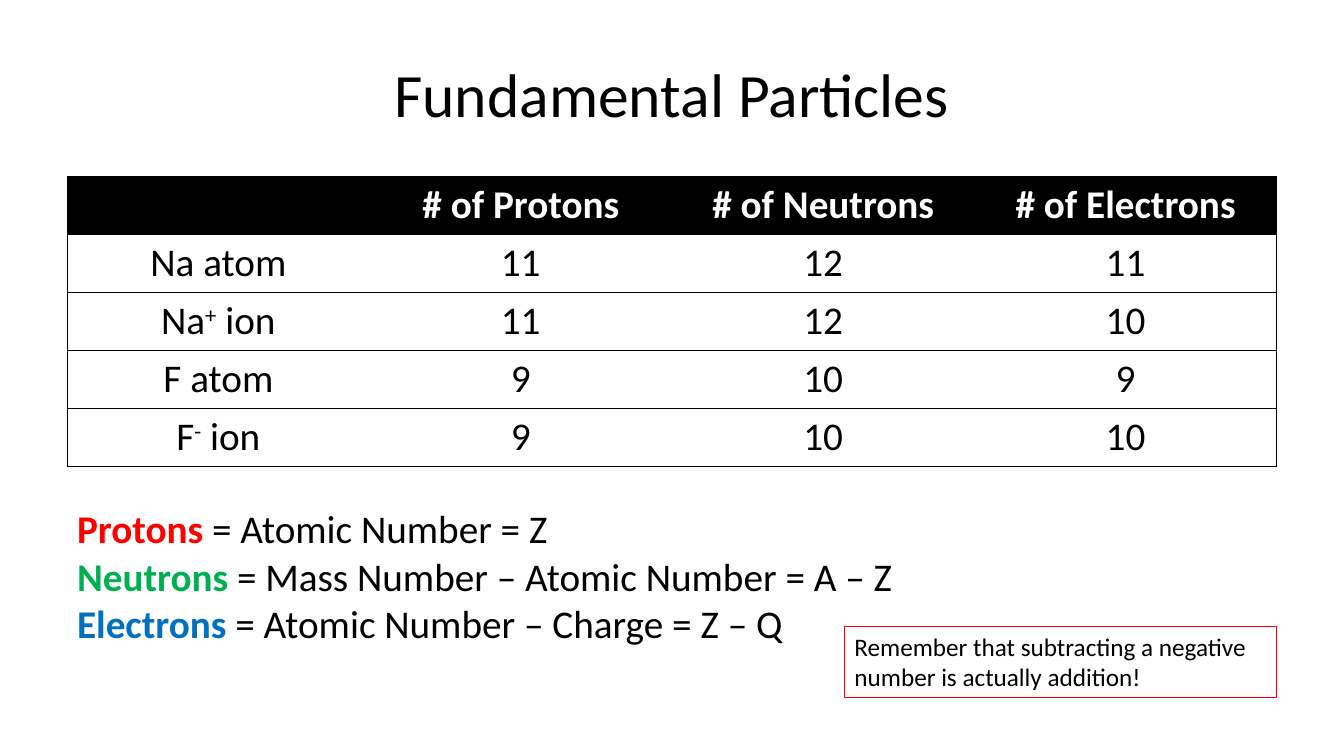
from lxml.etree import SubElement
from pptx import Presentation
from pptx.dml.color import RGBColor
from pptx.enum.shapes import MSO_SHAPE as Shape
from pptx.enum.text import MSO_ANCHOR as Anchor, PP_ALIGN as Align
from pptx.oxml.ns import qn
from pptx.util import Pt

COLORS = {"black": "000000", "white": "FFFFFF", "red": "FF0000",
          "green": "00B050", "blue": "0070C0"}
LEFT, WIDTH = 48, 864
ROW_HEIGHT = 41.4


def set_font(font, size, color="black", bold=False):
    font.name = "Calibri"
    font.size = Pt(size)
    font.bold = bold
    font.color.rgb = RGBColor.from_string(COLORS[color])


def add_border(cell, side, visible):
    line = SubElement(cell._tc.get_or_add_tcPr(), qn(f"a:ln{side}"), w=str(Pt(0.75)))
    if visible:
        fill = SubElement(line, qn("a:solidFill"))
        SubElement(fill, qn("a:srgbClr"), val=COLORS["black"])
    else:
        SubElement(line, qn("a:noFill"))


deck = Presentation()
deck.slide_width, deck.slide_height = Pt(960), Pt(540)
page = deck.slides.add_slide(deck.slide_layouts[5])

# Title
title = page.shapes.title
title.left, title.top, title.width, title.height = Pt(LEFT), Pt(21.6), Pt(WIDTH), Pt(90)
title.text_frame.text = "Fundamental Particles"
title.text_frame.vertical_anchor = Anchor.MIDDLE
title_para = title.text_frame.paragraphs[0]
title_para.alignment = Align.CENTER
set_font(title_para.font, 44)

# Particle table: a tuple in a cell holds text, superscript, text
rows = [
    ["", "# of Protons", "# of Neutrons", "# of Electrons"],
    ["Na atom", "11", "12", "11"],
    [("Na", "+", " ion"), "11", "12", "10"],
    ["F atom", "9", "10", "9"],
    [("F", "-", " ion"), "9", "10", "10"],
]
columns = len(rows[0])
table = page.shapes.add_table(len(rows), columns, Pt(LEFT), Pt(126),
                              Pt(WIDTH), Pt(ROW_HEIGHT * len(rows))).table
table.horz_banding = False
for row_index, row in enumerate(rows):
    table.rows[row_index].height = Pt(ROW_HEIGHT)
    header = row_index == 0
    for column_index, content in enumerate(row):
        cell = table.cell(row_index, column_index)
        para = cell.text_frame.paragraphs[0]
        para.alignment = Align.CENTER
        set_font(para.font, 28, "white" if header else "black", header)
        parts = content if isinstance(content, tuple) else (content,)
        for part_index, part in enumerate(parts):
            span = para.add_run()
            span.text = part
            if part_index == 1:
                span.font._element.set("baseline", "30000")
        add_border(cell, "L", column_index == 0)
        add_border(cell, "R", column_index == columns - 1)
        add_border(cell, "T", True)
        add_border(cell, "B", True)
        if header:
            cell.fill.solid()
            cell.fill.fore_color.rgb = RGBColor.from_string(COLORS["black"])
        else:
            cell.fill.background()

# Formulas
formulas = [
    ("Protons", "red", " = Atomic Number = Z"),
    ("Neutrons", "green", " = Mass Number – Atomic Number = A – Z"),
    ("Electrons", "blue", " = Atomic Number – Charge = Z – Q"),
]
box = page.shapes.add_textbox(Pt(LEFT), Pt(357), Pt(WIDTH), Pt(109))
frame = box.text_frame
frame.word_wrap = True
for index, (particle, color, formula) in enumerate(formulas):
    para = frame.add_paragraph() if index else frame.paragraphs[0]
    for text, text_color, bold in [(particle, color, True), (formula, "black", False)]:
        span = para.add_run()
        span.text = text
        set_font(span.font, 28, text_color, bold)

# Reminder
reminder = page.shapes.add_shape(Shape.RECTANGLE, Pt(603.3), Pt(447.2), Pt(308.7), Pt(50.9))
reminder.shadow.inherit = False
reminder.fill.background()
reminder.line.color.rgb = RGBColor.from_string(COLORS["red"])
reminder.line.width = Pt(0.75)
frame = reminder.text_frame
frame.word_wrap = True
frame.vertical_anchor = Anchor.TOP
frame.text = "Remember that subtracting a negative number is actually addition!"
frame.paragraphs[0].alignment = Align.LEFT
set_font(frame.paragraphs[0].font, 18)

deck.save("out.pptx")
